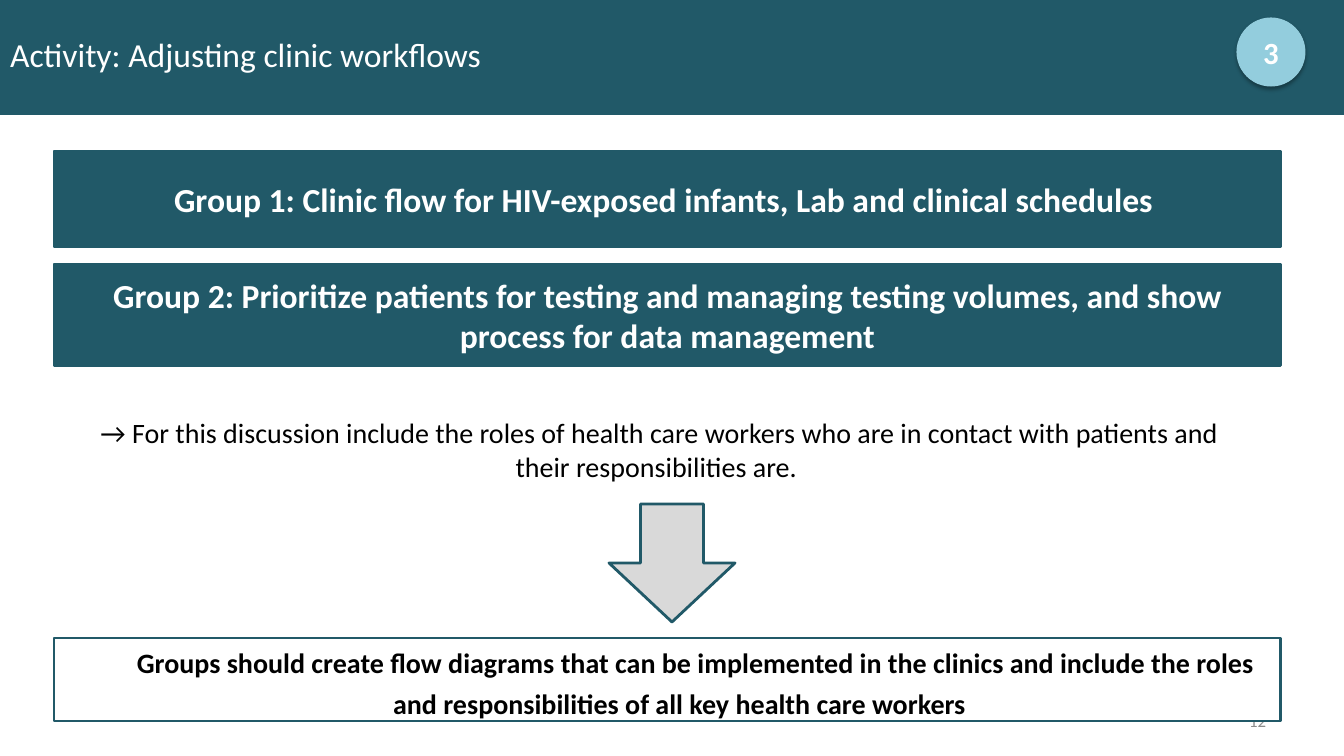
from lxml import etree
from pptx import Presentation
from pptx.dml.color import RGBColor
from pptx.enum.shapes import MSO_SHAPE as SHAPE
from pptx.enum.text import MSO_ANCHOR as ANCHOR, PP_ALIGN as ALIGN
from pptx.oxml import parse_xml
from pptx.oxml.ns import nsdecls
from pptx.util import Pt

PX = 914400 / 100.8
TEAL = RGBColor(0x21, 0x59, 0x68)
SKY = RGBColor(0x93, 0xCD, 0xDD)
WHITE = RGBColor(0xFF, 0xFF, 0xFF)
BLACK = RGBColor(0, 0, 0)
LIGHT = RGBColor(0xD9, 0xD9, 0xD9)
GREY = RGBColor(0x8C, 0x8C, 0x8C)


def add_box(kind, x, y, w, h, fill, line=None, width=2):
    sp = s.shapes.add_shape(kind, *(round(v * PX) for v in (x, y, w, h)))
    sp.shadow.inherit = False
    sp.fill.solid()
    sp.fill.fore_color.rgb = fill
    if line is None:
        sp.line.fill.background()
    else:
        sp.line.color.rgb = line
        sp.line.width = Pt(width)
    return sp


def write(sp, text, size, color, bold=False, align=ALIGN.CENTER, anchor=ANCHOR.MIDDLE):
    tf = sp.text_frame
    tf.text = text
    tf.word_wrap = True
    tf.vertical_anchor = anchor
    p = tf.paragraphs[0]
    p.alignment = align
    font = p.runs[0].font
    font.name, font.size, font.bold = "Calibri", Pt(size), bold
    font.color.rgb = color
    return p


prs = Presentation()
prs.slide_width, prs.slide_height = round(1344 * PX), round(756 * PX)
s = prs.slides.add_slide(prs.slide_layouts[5])

# Header band behind the title
title = s.shapes.title
title.left, title.top = 0, 0
title.width, title.height = round(1340 * PX), round(109 * PX)
write(title, "Activity: Adjusting clinic workflows", 24, WHITE, align=ALIGN.LEFT)
band = add_box(SHAPE.RECTANGLE, 0, -3, 1344, 118, TEAL)
title.element.addprevious(band.element)

# Page number
number = s.shapes.add_textbox(*(round(v * PX) for v in (963, 701, 313, 40)))
write(number, "12", 12, GREY, align=ALIGN.RIGHT)

# Activity badge with a soft shadow
badge = add_box(SHAPE.OVAL, 1237, 18, 68, 68, SKY, SKY, 0.75)
write(badge, "3", 22, WHITE, True)
effects = badge.element.spPr.find("{*}effectLst")
effects.append(parse_xml(
    f'<a:outerShdw {nsdecls("a")} blurRad="{Pt(3.1)}" dist="{Pt(1.8)}" dir="5400000" rotWithShape="0">'
    '<a:srgbClr val="000000"><a:alpha val="35000"/></a:srgbClr></a:outerShdw>'))

# Discussion prompt
prompt = add_box(SHAPE.RECTANGLE, 83, 411, 1153, 76, WHITE)
write(prompt, "→ For this discussion include the roles of health care workers who are in "
      "contact with patients and their responsibilities are. ", 20, BLACK, anchor=ANCHOR.TOP)

# Group tasks
groups = [
    (151, 96, "Group 1: Clinic flow for HIV-exposed infants, Lab and clinical schedules "),
    (264, 102, "Group 2: Prioritize patients for testing and managing testing volumes, "
               "and show process for data management"),
]
for y, h, text in groups:
    write(add_box(SHAPE.RECTANGLE, 54, y, 1227, h, TEAL, TEAL), text, 24, WHITE, True)

# Expected result
result = add_box(SHAPE.RECTANGLE, 54, 638, 1227, 83, WHITE, TEAL)
p = write(result, "Groups should create flow diagrams that can be implemented in the clinics and "
          "include the roles and responsibilities of all key health care workers \t", 20, BLACK, True)
p.line_spacing = 1.2
pPr = p._p.get_or_add_pPr()
pPr.set("marL", str(round(56 * PX)))
pPr.set("indent", "0")

# Arrow down to the result
add_box(SHAPE.DOWN_ARROW, 609, 504, 126, 118, LIGHT, TEAL)

prs.save("out.pptx")
